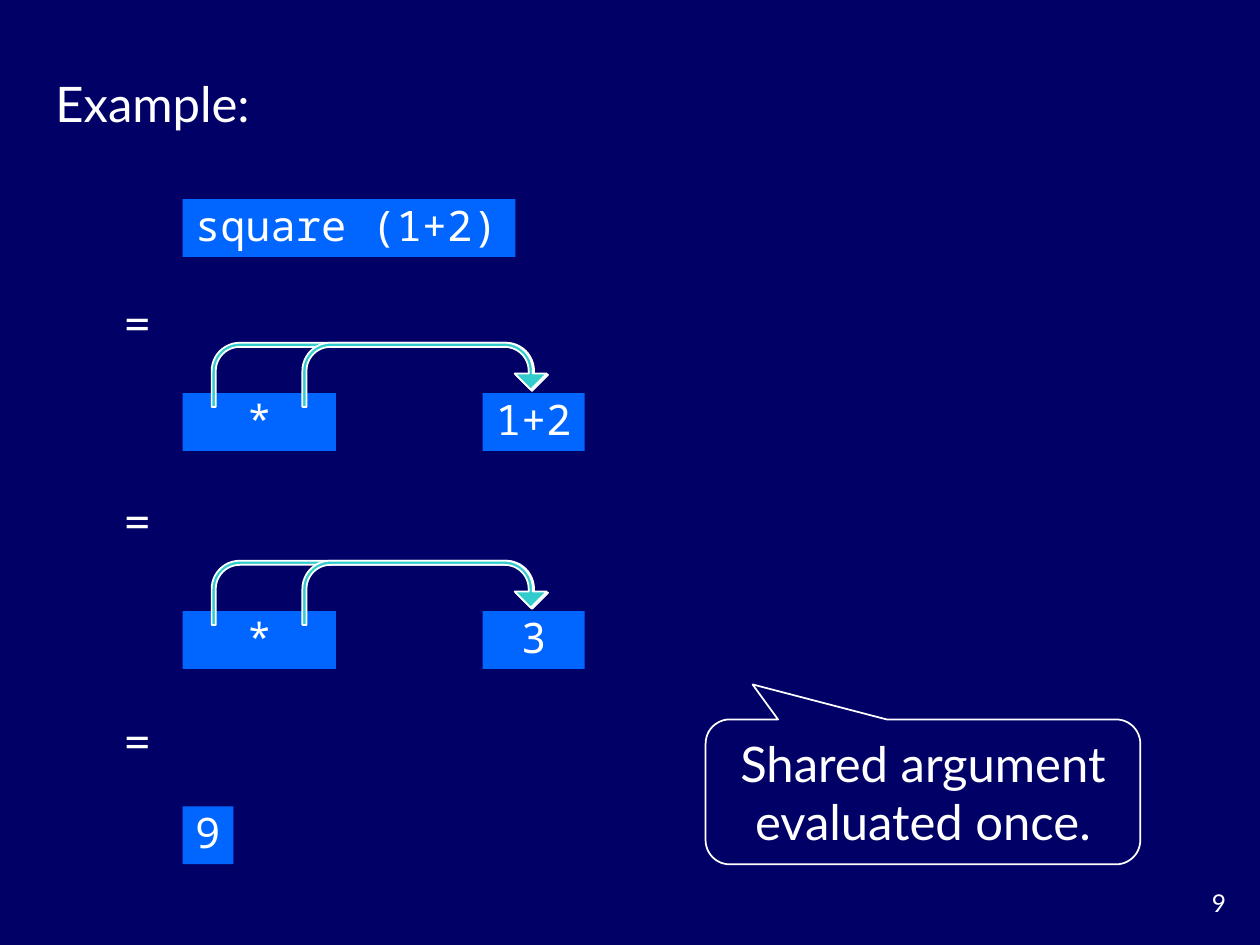
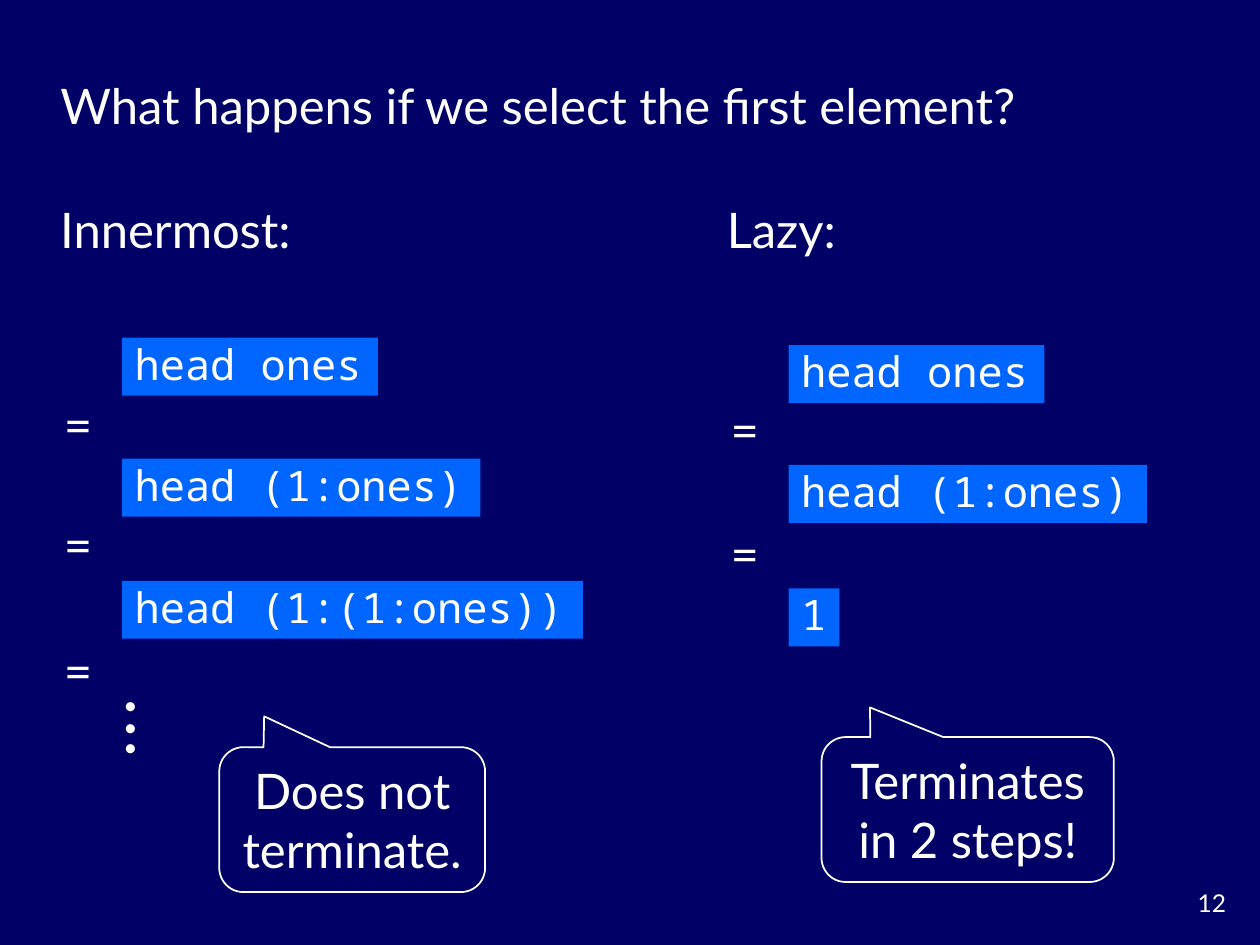
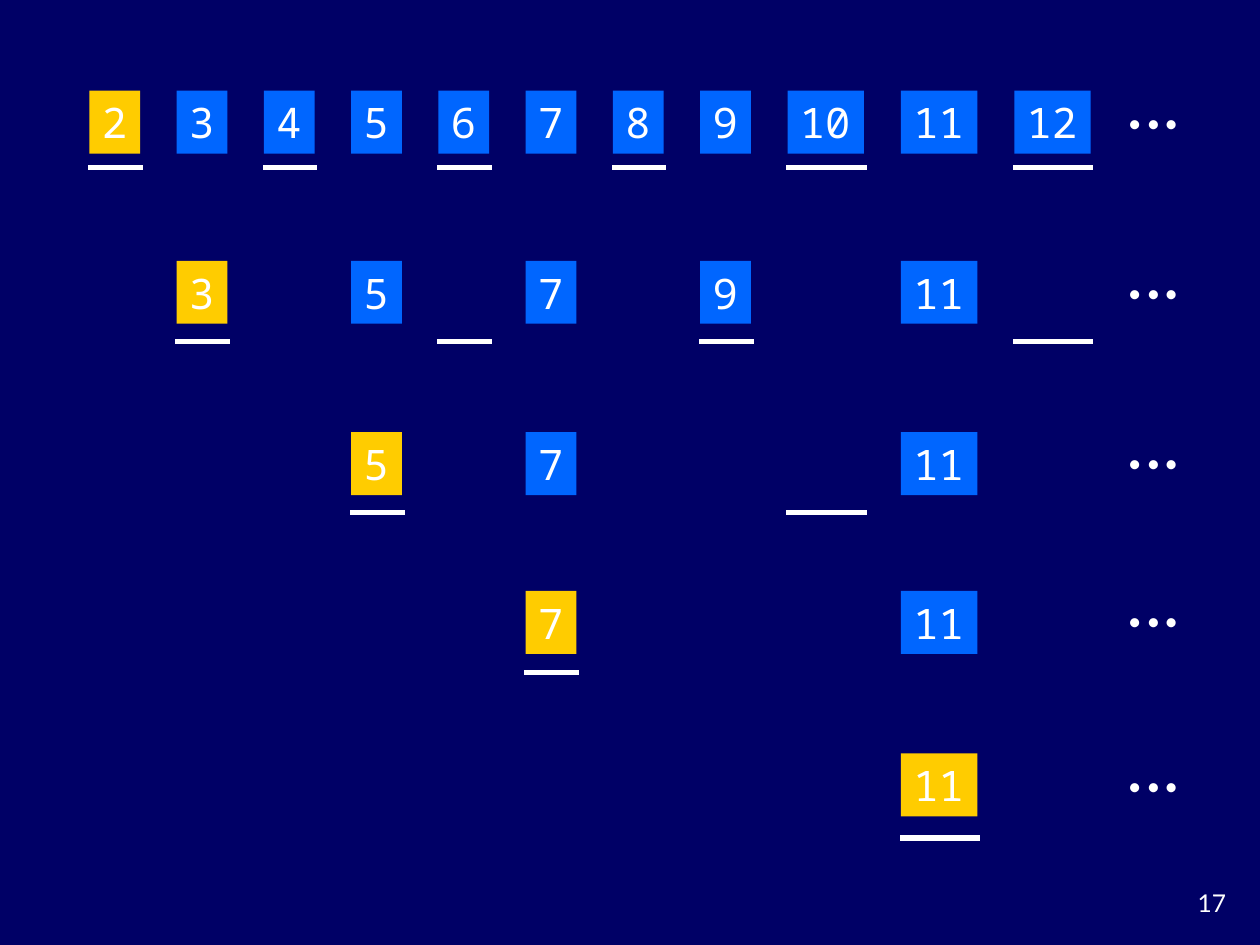
"""Builds three slides on lazy evaluation: sharing, infinite lists and a prime sieve."""
from dataclasses import dataclass

from lxml import etree
from pptx import Presentation
from pptx.dml.color import RGBColor
from pptx.enum.shapes import MSO_CONNECTOR, MSO_SHAPE
from pptx.enum.text import MSO_ANCHOR, PP_ALIGN
from pptx.oxml.ns import qn
from pptx.util import Inches, Pt


@dataclass(frozen=True)
class Theme:
    navy: RGBColor = RGBColor(0x00, 0x00, 0x66)
    blue: RGBColor = RGBColor(0x00, 0x66, 0xFF)
    gold: RGBColor = RGBColor(0xFF, 0xCC, 0x00)
    teal: RGBColor = RGBColor(0x33, 0xCC, 0xCC)
    white: RGBColor = RGBColor(0xFF, 0xFF, 0xFF)
    body_font: str = "Lato"
    code_font: str = "Noto Sans Mono"
    body: int = 28
    code: int = 24
    small: int = 14


T = Theme()
LINE_H = 0.57
CODE_H = 0.46

SHARING = {
    "number": 9,
    "title": ("Example:", 0.34, 0.53, 1.8),
    "code": [("square (1+2)", 1.58), ("9", 6.4)],
    "shared": [("1+2", 3.12), ("3", 4.85)],
    "equals": [2.27, 3.84, 5.59],
    "callout": ("Shared argument evaluated once.", 5.6, 5.71, 3.45, (-0.392, -0.742, 0.167)),
}

INFINITE = {
    "number": 12,
    "title": ("What happens if we select the first element?", 0.38, 0.55, 9.24),
    "columns": [
        {
            "heading": "Innermost:", "left": 0.38,
            "code": [("head ones", 2.68), ("head (1:ones)", 3.64), ("head (1:(1:ones))", 4.61)],
            "equals": [3.08, 4.03, 5.03],
            "callout": ("Does not terminate.", 1.74, 5.93, 2.11, (-0.331, -0.713, 0.167)),
        },
        {
            "heading": "Lazy:", "left": 5.67,
            "code": [("head ones", 2.74), ("head (1:ones)", 3.69), ("1", 4.67)],
            "equals": [3.12, 4.1],
            "callout": ("Terminates in 2 steps!", 6.52, 5.85, 2.32, (-0.334, -0.705, 0.167)),
        },
    ],
    "dots": [(0.88, 5.43), (0.88, 5.6), (0.88, 5.76)],
}

SIEVE = {
    "number": 17,
    "last": 12,
    "rows": [(0.72, 1.33, 0.81), (2.07, 2.71, 2.16), (3.43, 4.07, 3.51),
             (4.69, 5.34, 4.76), (5.98, 6.65, 6.07)],
    "dots": [9, 9.14, 8.85],
}


def place(sp, left, top, width, height):
    sp.left, sp.top, sp.width, sp.height = map(Inches, (left, top, width, height))


def write(sp, text, size=T.body, font=T.body_font, align=PP_ALIGN.CENTER,
          wrap=False, anchor=MSO_ANCHOR.MIDDLE, spacing=1.0):
    tf = sp.text_frame
    tf.text = text
    tf.word_wrap = wrap
    tf.vertical_anchor = anchor
    p = tf.paragraphs[0]
    p.alignment = align
    p.line_spacing = spacing
    p.font.size = Pt(size)
    p.font.name = font
    p.font.color.rgb = T.white


def add_text(slide, text, left, top, width, height, **style):
    write(slide.shapes.add_textbox(*map(Inches, (left, top, width, height))), text, **style)


def add_shape(slide, kind, left, top, width, height, fill=None, line=None, adjust=()):
    sp = slide.shapes.add_shape(kind, *map(Inches, (left, top, width, height)))
    sp.shadow.inherit = False
    if fill is None:
        sp.fill.background()
    else:
        sp.fill.solid()
        sp.fill.fore_color.rgb = fill
    if line is None:
        sp.line.fill.background()
    else:
        sp.line.color.rgb = line
        sp.line.width = Pt(1)
    for i, value in enumerate(adjust):
        sp.adjustments[i] = value
    return sp


def code_width(chars):
    return chars * T.code * 0.61 / 72 + 0.2


def add_code(slide, text, left, top, chars=None, height=CODE_H, fill=T.blue, spacing=0.9):
    sp = add_shape(slide, MSO_SHAPE.RECTANGLE, left, top,
                   code_width(chars or len(text)), height, fill)
    write(sp, text, T.code, T.code_font, spacing=spacing,
          align=PP_ALIGN.CENTER if chars else PP_ALIGN.LEFT)


def add_equals(slide, left, top):
    add_text(slide, "=", left, top, 0.48, LINE_H)


def add_dots(slide, spots):
    for left, top in spots:
        add_text(slide, "•", left, top, 0.29, 0.33, size=T.small)


def add_callout(slide, text, left, top, width, adjust):
    sp = add_shape(slide, MSO_SHAPE.ROUNDED_RECTANGULAR_CALLOUT, left, top, width, 1.15,
                   line=T.white, adjust=adjust)
    write(sp, text, wrap=True)


def add_underline(slide, left, top, width):
    ends = map(Inches, (left, top, left + width, top))
    cx = slide.shapes.add_connector(MSO_CONNECTOR.STRAIGHT, *ends)
    cx.line.color.rgb = T.white
    cx.line.width = Pt(3)
    cx.line._get_or_add_ln().set("cap", "sq")
    etree.SubElement(cx._element.spPr, qn("a:effectLst"))


def new_slide(prs, number, title=None):
    slide = prs.slides.add_slide(prs.slide_layouts[5 if title else 6])
    if title:
        text, left, top, width = title
        place(slide.shapes.title, left, top, width, LINE_H)
        write(slide.shapes.title, text, align=PP_ALIGN.LEFT, wrap=True)
    add_text(slide, str(number), 9.16, 7, 0.67, 0.33, size=T.small,
             align=PP_ALIGN.RIGHT, wrap=True, anchor=MSO_ANCHOR.TOP)
    return slide


def build_sharing(prs):
    slide = new_slide(prs, SHARING["number"], SHARING["title"])
    for text, top in SHARING["code"]:
        add_code(slide, text, 1.45, top)
    for top in SHARING["equals"]:
        add_equals(slide, 0.85, top)
    for argument, top in SHARING["shared"]:
        add_code(slide, "*", 1.45, top, chars=5)
        add_code(slide, argument, 3.83, top, chars=3)
        for left, width, drop in ((1.68, 2.67, 0.75), (2.4, 1.94, 0.73)):
            add_shape(slide, MSO_SHAPE.U_TURN_ARROW, left, top - 0.4, width, 0.51,
                      T.teal, T.white, (0.065, 0.25, 0.25, 0.438, drop))
    add_callout(slide, *SHARING["callout"])


def build_infinite(prs):
    slide = new_slide(prs, INFINITE["number"], INFINITE["title"])
    for column in INFINITE["columns"]:
        left = column["left"]
        add_text(slide, column["heading"], left, 1.53, 3.96, LINE_H,
                 align=PP_ALIGN.LEFT, wrap=True)
        for text, top in column["code"]:
            add_code(slide, text, left + 0.59, top)
        for top in column["equals"]:
            add_equals(slide, left, top)
        add_callout(slide, *column["callout"])
    add_dots(slide, INFINITE["dots"])


def number_left(n):
    return 0.71 + min(n - 2, 8) * 5.54 / 8 + max(n - 10, 0) * 0.9


def build_sieve(prs):
    slide = new_slide(prs, SIEVE["number"])
    last = SIEVE["last"]
    numbers = list(range(2, last + 1))
    for top, underline_top, dots_top in SIEVE["rows"]:
        prime = numbers[0]
        for n in numbers:
            add_code(slide, str(n), number_left(n), top, height=0.5,
                     fill=T.gold if n == prime else T.blue, spacing=1.0)
        for n in range(prime, last + 1, prime):
            add_underline(slide, number_left(n) + 0.01, underline_top,
                          code_width(len(str(n))) - 0.01)
        add_dots(slide, [(left, dots_top) for left in SIEVE["dots"]])
        numbers = [n for n in numbers if n % prime]


def main():
    prs = Presentation()
    prs.slide_width, prs.slide_height = Inches(10), Inches(7.5)
    fill = prs.slide_master.background.fill
    fill.solid()
    fill.fore_color.rgb = T.navy
    build_sharing(prs)
    build_infinite(prs)
    build_sieve(prs)
    prs.save("out.pptx")


if __name__ == "__main__":
    main()
